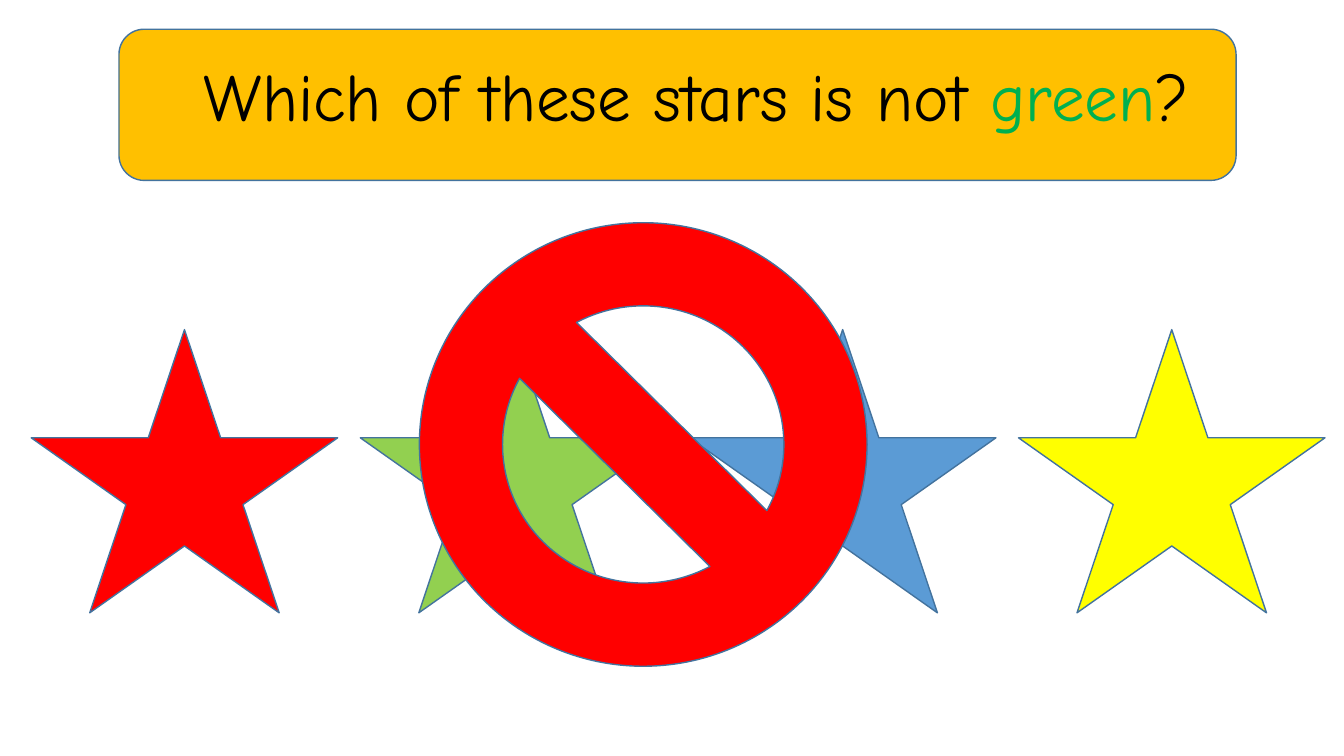
from pptx import Presentation
from pptx import util as u
from pptx.dml.color import RGBColor
from pptx.enum import shapes, text

BLACK = RGBColor(0x00, 0x00, 0x00)
GREEN = RGBColor(0x00, 0xB0, 0x50)
ORANGE = RGBColor(0xFF, 0xC0, 0x00)
RED = RGBColor(0xFF, 0x00, 0x00)
LIGHT_GREEN = RGBColor(0x92, 0xD0, 0x50)
BLUE = RGBColor(0x5B, 0x9B, 0xD5)
YELLOW = RGBColor(0xFF, 0xFF, 0x00)
OUTLINE = RGBColor(0x43, 0x73, 0x9E)

deck = Presentation()
deck.slide_width = u.Inches(13.33)
deck.slide_height = u.Inches(7.5)
page = deck.slides.add_slide(deck.slide_layouts[6])


def add_figure(kind, left, top, width, height, color):
    figure = page.shapes.add_shape(
        kind, u.Inches(left), u.Inches(top), u.Inches(width), u.Inches(height))
    figure.shadow.inherit = False
    figure.fill.solid()
    figure.fill.fore_color.rgb = color
    figure.line.color.rgb = OUTLINE
    figure.line.width = u.Pt(1)


add_figure(shapes.MSO_SHAPE.ROUNDED_RECTANGLE, 1.18, 0.29, 11.08, 1.5, ORANGE)

question = page.shapes.add_textbox(
    u.Inches(1.05), u.Inches(0.49), u.Inches(11.72), u.Inches(0.91))
question.text_frame.word_wrap = True
question.text_frame.auto_size = text.MSO_AUTO_SIZE.SHAPE_TO_FIT_TEXT
para = question.text_frame.paragraphs[0]
para.alignment = text.PP_ALIGN.CENTER
for words, color in [("Which of these stars is not ", BLACK), ("green", GREEN), ("?", BLACK)]:
    span = para.add_run()
    span.text = words
    span.font.name = "Comic Neue"
    span.font.size = u.Pt(48)
    span.font.color.rgb = color

for index, color in enumerate([RED, LIGHT_GREEN, BLUE, YELLOW]):
    add_figure(shapes.MSO_SHAPE.STAR_5_POINT, 0.31 + index * 3.264, 3.27, 3.04, 2.81, color)

add_figure(shapes.MSO_SHAPE.NO_SYMBOL, 4.16, 2.21, 4.44, 4.4, RED)

deck.save("out.pptx")
